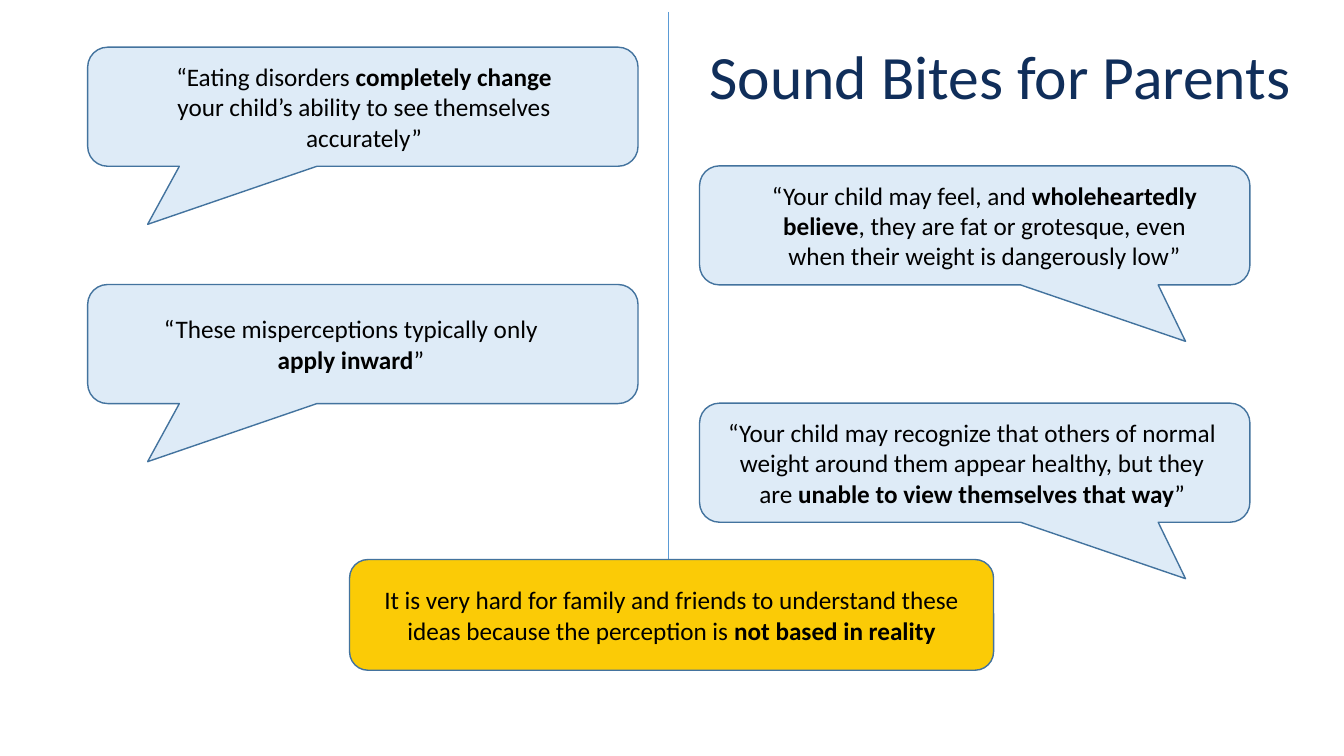
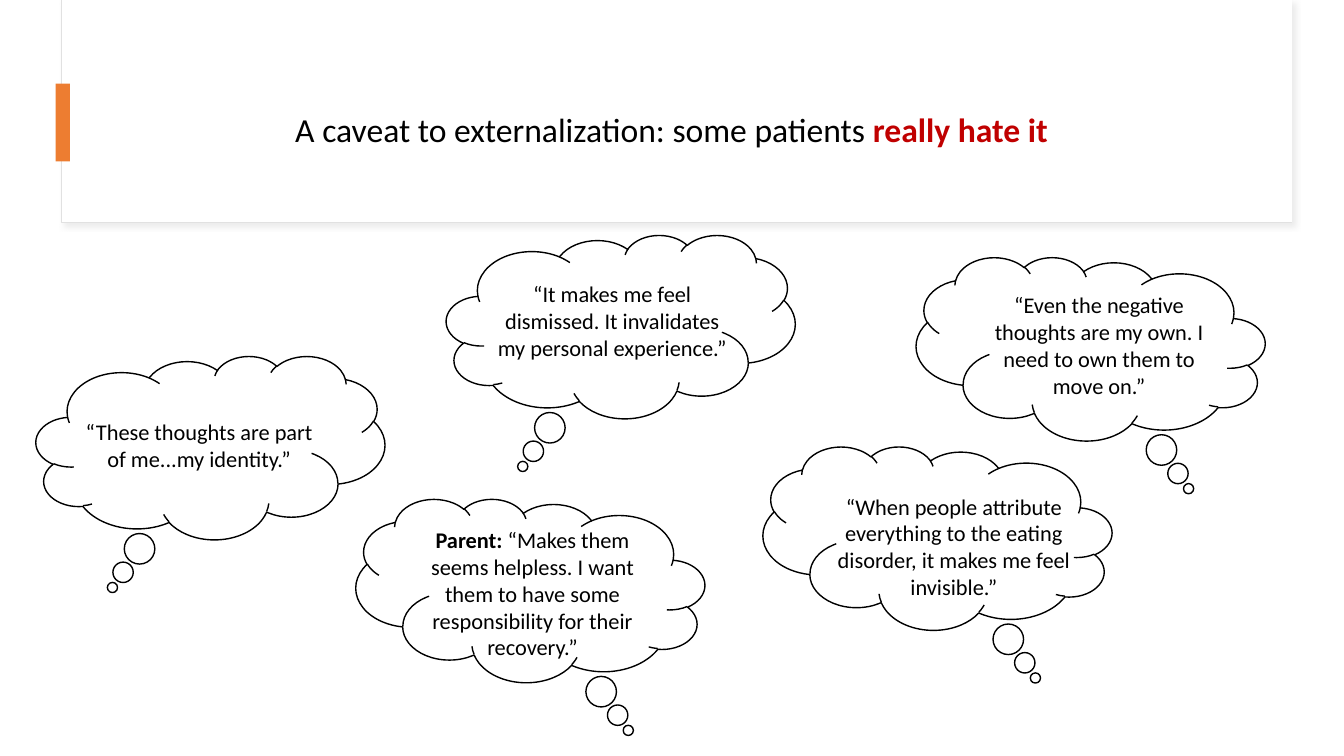
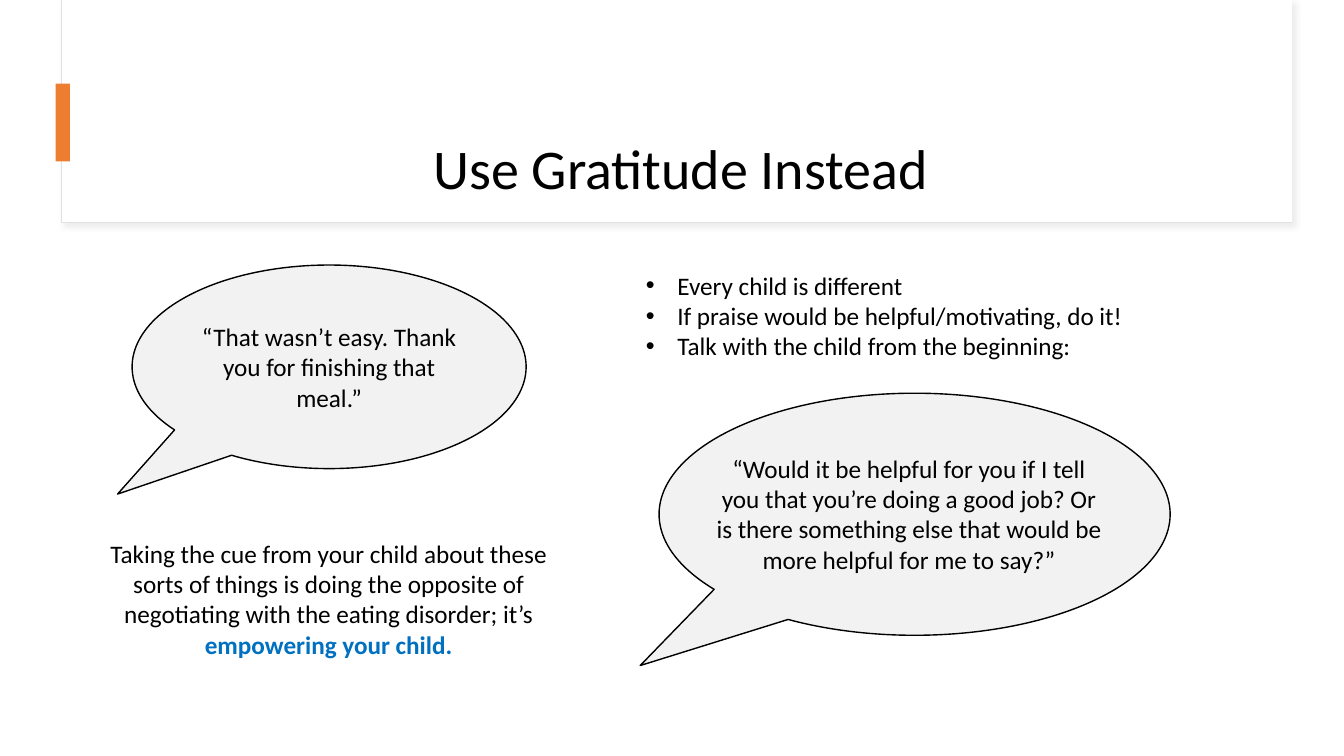
from lxml.etree import SubElement
from pptx import Presentation
from pptx.dml.color import RGBColor
from pptx.enum.shapes import MSO_CONNECTOR, MSO_SHAPE
from pptx.enum.text import MSO_ANCHOR, PP_ALIGN
from pptx.oxml import parse_xml
from pptx.oxml.ns import nsdecls, qn
from pptx.util import Cm, Pt

COLORS = {
    "white": "FFFFFF", "black": "000000", "navy": "102E5A",
    "pale_blue": "DEEBF7", "outline_blue": "43739E", "divider": "5B9BD5",
    "yellow": "FBCB06", "orange": "ED7D31", "red": "C00000",
    "bright_blue": "0070C0", "grey": "F2F2F2", "frame": "E1E1E1",
    "shadow": "D9D9D9",
}
FONT = "Calibri"
CENTERED = {"alignment": PP_ALIGN.CENTER}
HEADLINE = {"alignment": PP_ALIGN.CENTER, "line_spacing": 1.5, "space_after": Pt(6)}

SPEECH_SIZE = (13.87, 3)
CLOUD_SIZE = (8.79, 4.62)
CLOUD_TAIL = (-0.281, 0.763)
ELLIPSE_TAIL = (-0.537, 0.625)
LEFT_SPEECH = (2.21, (-0.391, 0.988, 0.167))
RIGHT_SPEECH = (17.63, (0.383, 0.974, 0.167))


def color(name):
    return RGBColor.from_string(COLORS[name])


def apply(target, formats):
    for attribute, value in formats.items():
        setattr(target, attribute, value)


def bold(text, ink="black"):
    return text, True, ink


def write(frame, paragraphs, size=18, ink="black", formats=CENTERED,
          anchor=MSO_ANCHOR.TOP, bullet=False):
    """Fill a frame; each paragraph is a list of strings and bold() parts."""
    apply(frame, {"word_wrap": True, "vertical_anchor": anchor})
    for index, parts in enumerate(paragraphs):
        paragraph = frame.add_paragraph() if index else frame.paragraphs[0]
        if bullet:
            add_bullet(paragraph)
        apply(paragraph, formats)
        for part in parts:
            text, is_bold, part_ink = (part, False, ink) if isinstance(part, str) else part
            run = paragraph.add_run()
            run.text = text
            apply(run.font, {"name": FONT, "size": Pt(size), "bold": is_bold})
            run.font.color.rgb = color(part_ink)


def add_bullet(paragraph):
    properties = paragraph._p.get_or_add_pPr()
    indent = Cm(0.79)
    properties.set("marL", str(indent))
    properties.set("indent", str(-indent))
    SubElement(properties, qn("a:buFont")).set("typeface", "Arial")
    SubElement(properties, qn("a:buChar")).set("char", "•")


def add_text(shapes, box, paragraphs, **style):
    write(shapes.add_textbox(*map(Cm, box)).text_frame, paragraphs, **style)


def add_figure(shapes, preset, box, fill, outline=None, width=1, adjust=()):
    figure = shapes.add_shape(preset, *map(Cm, box))
    figure.shadow.inherit = False
    figure.fill.solid()
    figure.fill.fore_color.rgb = color(fill)
    if outline:
        figure.line.color.rgb = color(outline)
        figure.line.width = Pt(width)
    else:
        figure.line.fill.background()
    for index, value in enumerate(adjust):
        figure.adjustments[index] = value
    return figure


def add_callout(slide, preset, box, text_box, parts, fill, outline, adjust,
                size=18, mirrored=False):
    """Group a bubble with the quotation laid over it."""
    group = slide.shapes.add_group_shape()
    bubble = add_figure(group.shapes, preset, box, fill, outline, adjust=adjust)
    if mirrored:
        bubble._element.spPr.xfrm.set("flipH", "1")
    add_text(group.shapes, text_box, [parts], size=size, anchor=MSO_ANCHOR.MIDDLE)


def add_divider(slide, x, top, bottom):
    divider = slide.shapes.add_connector(
        MSO_CONNECTOR.STRAIGHT, Cm(x), Cm(top), Cm(x), Cm(bottom))
    divider.line.color.rgb = color("divider")
    divider.line.width = Pt(0.5)
    SubElement(divider._element.spPr, qn("a:effectLst"))


def add_header(slide, title_box, title, size):
    """Draw the shadowed title panel with its orange accent."""
    panel = add_figure(slide.shapes, MSO_SHAPE.RECTANGLE, (1.55, 0, 31.01, 5.61),
                       "white", "frame", 0.75)
    panel._element.spPr.find(qn("a:effectLst")).append(parse_xml(
        f'<a:outerShdw {nsdecls("a")} blurRad="{Pt(4)}" dist="{Pt(3)}" '
        f'dir="2700000" algn="tl" rotWithShape="0">'
        f'<a:srgbClr val="{COLORS["shadow"]}"><a:alpha val="50000"/></a:srgbClr>'
        '</a:outerShdw>'))
    add_figure(slide.shapes, MSO_SHAPE.RECTANGLE, (1.57, 0, 30.99, 5.59), "white")
    add_figure(slide.shapes, MSO_SHAPE.RECTANGLE, (1.4, 2.11, 0.36, 1.96), "orange")
    add_text(slide.shapes, title_box, [title], size=size, formats=HEADLINE)


def build_sound_bites(slide):
    add_divider(slide, 16.84, 0.3, 16.59)
    conclusion = add_figure(slide.shapes, MSO_SHAPE.ROUNDED_RECTANGLE,
                            (8.81, 14.1, 16.23, 2.79), "yellow", "outline_blue")
    write(conclusion.text_frame, [[
        "It is very hard for family and friends to understand these ideas "
        "because the perception is ", bold("not based in reality")]],
        anchor=MSO_ANCHOR.MIDDLE)

    quotes = [
        (LEFT_SPEECH, 3.61, 11.13, [
            "“Eating disorders ", bold("completely change "),
            "your child’s ability to see themselves accurately”"]),
        (RIGHT_SPEECH, 19.02, 11.58, [
            "“Your child may feel, and ", bold("wholeheartedly believe"),
            ", they are fat or grotesque, even when their weight is dangerously low”"]),
        (LEFT_SPEECH, 3.28, 11.13, [
            "“These misperceptions typically only ", bold("apply inward"), "”"]),
        (RIGHT_SPEECH, 18.06, 12.88, [
            "“Your child may recognize that others of normal weight around them "
            "appear healthy, but they are ",
            bold("unable to view themselves that way"), "”"]),
    ]
    width, height = SPEECH_SIZE
    for row, ((left, tail), text_left, text_width, parts) in enumerate(quotes):
        top = 1.19 + row * 2.99
        add_callout(slide, MSO_SHAPE.ROUNDED_RECTANGULAR_CALLOUT,
                    (left, top, width, height), (text_left, top, text_width, height),
                    parts, "pale_blue", "outline_blue", tail)
    add_text(slide.shapes, (17.63, 0.84, 15.39, 2.13), [["Sound Bites for Parents"]],
             size=44, ink="navy", formats={})


def build_caveat(slide):
    add_header(slide, (3.78, 2.11, 26.29, 3.23),
               ["A caveat to externalization: some patients ",
                bold("really hate it", "red")], 24)
    thoughts = [
        ((0.91, 8.97), (1.68, 10.39, 6.68, 1.63), False,
         ["“These thoughts are part of me...my identity.”"]),
        ((11.25, 5.92), (12.09, 6.93, 6.68, 2.31), False,
         ["“It makes me feel dismissed. It invalidates my personal experience.”"]),
        ((23.09, 6.48), (24.36, 7.19, 6.68, 3), True,
         ["“Even the negative thoughts are my own. I need to own them to move on.”"]),
        ((19.23, 11.25), (20.7, 12.27, 6.68, 3), True,
         ["“When people attribute everything to the eating disorder, "
          "it makes me feel invisible.”"]),
        ((8.97, 12.57), (10.08, 13.11, 6.68, 3.68), True,
         [bold("Parent:"), " “Makes them seems helpless. I want them to have some "
          "responsibility for their recovery.”"]),
    ]
    for corner, text_box, mirrored, parts in thoughts:
        add_callout(slide, MSO_SHAPE.CLOUD_CALLOUT, corner + CLOUD_SIZE, text_box,
                    parts, "white", "black", CLOUD_TAIL, 16, mirrored)


def build_gratitude(slide):
    add_header(slide, (4.01, 2.39, 26.29, 3.23), ["Use Gratitude Instead"], 40)
    thanks = add_figure(slide.shapes, MSO_SHAPE.OVAL_CALLOUT, (3.33, 6.68, 9.93, 5.13),
                        "grey", "black", adjust=ELLIPSE_TAIL)
    write(thanks.text_frame,
          [["“That wasn’t easy. Thank you for finishing that meal.”"]],
          anchor=MSO_ANCHOR.MIDDLE)
    add_text(slide.shapes, (16.03, 6.68, 16.54, 2.57), [
        ["Every child is different"],
        ["If praise would be helpful/motivating, do it!"],
        ["Talk with the child from the beginning:"],
    ], formats={}, bullet=True)
    add_callout(slide, MSO_SHAPE.OVAL_CALLOUT, (16.61, 9.91, 12.88, 6.1),
                (17.78, 11.28, 10.26, 3.33),
                ["“Would it be helpful for you if I tell you that you’re doing a good "
                 "job? Or is there something else that would be more helpful for me "
                 "to say?”"], "grey", "black", ELLIPSE_TAIL)
    add_text(slide.shapes, (2.29, 13.44, 11.99, 3.33), [[
        "Taking the cue from your child about these sorts of things is doing the "
        "opposite of negotiating with the eating disorder; it’s ",
        bold("empowering your child.", "bright_blue")]])


def main():
    deck = Presentation()
    apply(deck, {"slide_width": Cm(33.87), "slide_height": Cm(19.05)})
    for build in (build_sound_bites, build_caveat, build_gratitude):
        build(deck.slides.add_slide(deck.slide_layouts[6]))
    deck.save("out.pptx")


if __name__ == "__main__":
    main()
